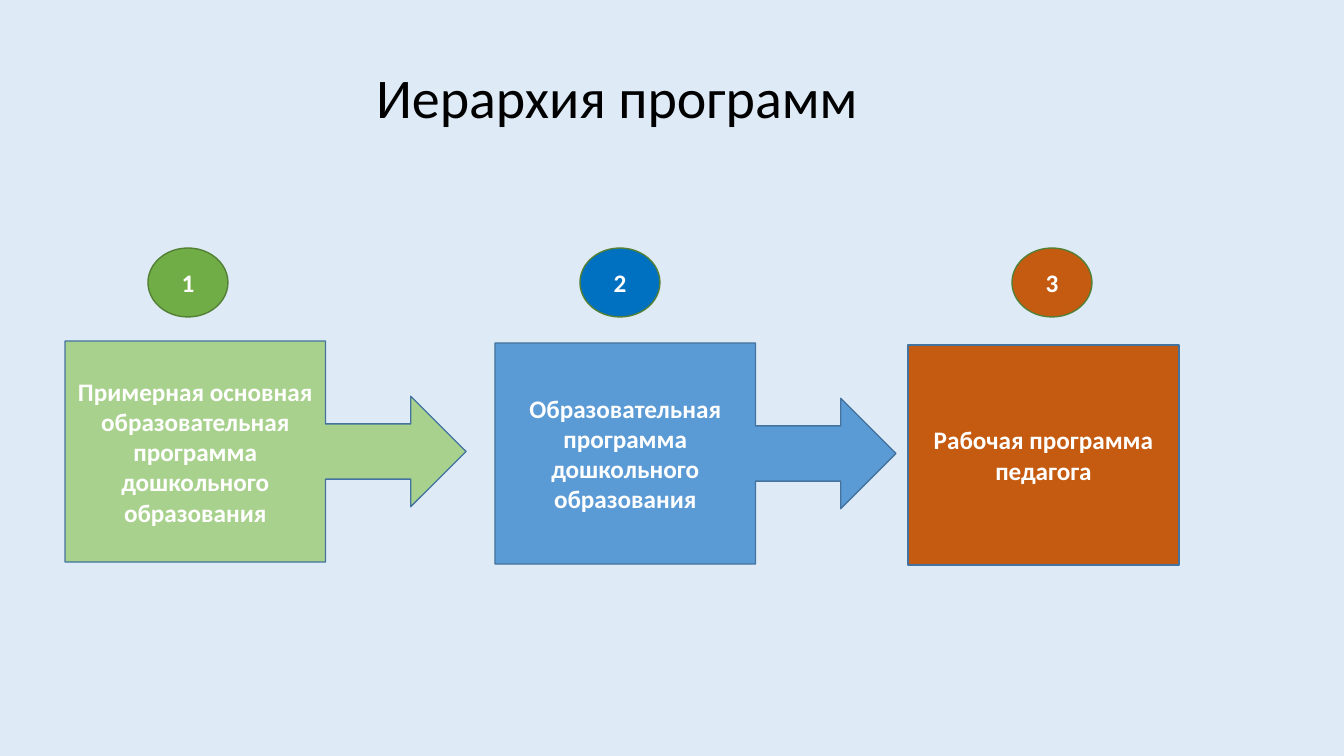
from pptx import Presentation
from pptx.dml.color import RGBColor
from pptx.enum.shapes import MSO_SHAPE
from pptx.enum.text import MSO_ANCHOR, MSO_AUTO_SIZE, PP_ALIGN
from pptx.util import Pt

CALLOUT = MSO_SHAPE.RIGHT_ARROW_CALLOUT
RECTANGLE = MSO_SHAPE.RECTANGLE
CIRCLE = MSO_SHAPE.FLOWCHART_CONNECTOR
LEFT, CENTER = PP_ALIGN.LEFT, PP_ALIGN.CENTER
TOP, MIDDLE = MSO_ANCHOR.TOP, MSO_ANCHOR.MIDDLE
TITLE_ONLY = 5

# Content
TITLE = "Иерархия программ"
# text, shape, box in px, box fill, badge fill
PROGRAMS = [
    ("Примерная основная образовательная программа дошкольного образования",
     CALLOUT, (65, 341, 401, 221), "A9D18E", "70AD47"),
    ("Образовательная программа дошкольного образования",
     CALLOUT, (495, 343, 401, 221), "5B9BD5", "0070C0"),
    ("Рабочая программа педагога",
     RECTANGLE, (908, 345, 271, 220), "C55A11", "C55A11"),
]

# Layout in px and formats
SCALE = 914400 / 100.8
PAGE_SIZE = (1344, 756)
TITLE_BOX = (366, 57, 509, 78)
BADGE_LEFT, BADGE_TOP, BADGE_STEP = 148, 248, 432
BADGE_SIZE = (80, 69)
BACKGROUND, BOX_LINE, BADGE_LINE = "DEEBF7", "43739E", "538035"
TITLE_FONT = {"name": "Calibri", "size": Pt(40), "bold": False}
LABEL_FONT = {"name": "Calibri", "size": Pt(18), "bold": True}


def emu(px):
    return round(px * SCALE)


def paint(color_format, color):
    color_format.rgb = RGBColor.from_string(color)


def write(shape, text, font, color, align, anchor):
    frame = shape.text_frame
    frame.word_wrap = True
    frame.auto_size = MSO_AUTO_SIZE.NONE
    frame.vertical_anchor = anchor
    para = frame.paragraphs[0]
    para.alignment = align
    span = para.add_run()
    span.text = text
    for name, value in font.items():
        setattr(span.font, name, value)
    paint(span.font.color, color)


def add_label(page, kind, box, text, fill, line):
    shape = page.shapes.add_shape(kind, *map(emu, box))
    shape.shadow.inherit = False
    shape.fill.solid()
    paint(shape.fill.fore_color, fill)
    paint(shape.line.color, line)
    shape.line.width = Pt(1)
    write(shape, text, LABEL_FONT, "FFFFFF", CENTER, MIDDLE)


def main():
    deck = Presentation()
    deck.slide_width, deck.slide_height = map(emu, PAGE_SIZE)
    page = deck.slides.add_slide(deck.slide_layouts[TITLE_ONLY])
    page.background.fill.solid()
    paint(page.background.fill.fore_color, BACKGROUND)

    # Title
    title = page.shapes.title
    title.left, title.top, title.width, title.height = map(emu, TITLE_BOX)
    write(title, TITLE, TITLE_FONT, "000000", LEFT, TOP)

    # Programs, each with a numbered badge above
    for index, (text, kind, box, fill, badge_fill) in enumerate(PROGRAMS):
        add_label(page, kind, box, text, fill, BOX_LINE)
        badge = (BADGE_LEFT + index * BADGE_STEP, BADGE_TOP, *BADGE_SIZE)
        add_label(page, CIRCLE, badge, str(index + 1), badge_fill, BADGE_LINE)

    deck.save("out.pptx")


if __name__ == "__main__":
    main()
